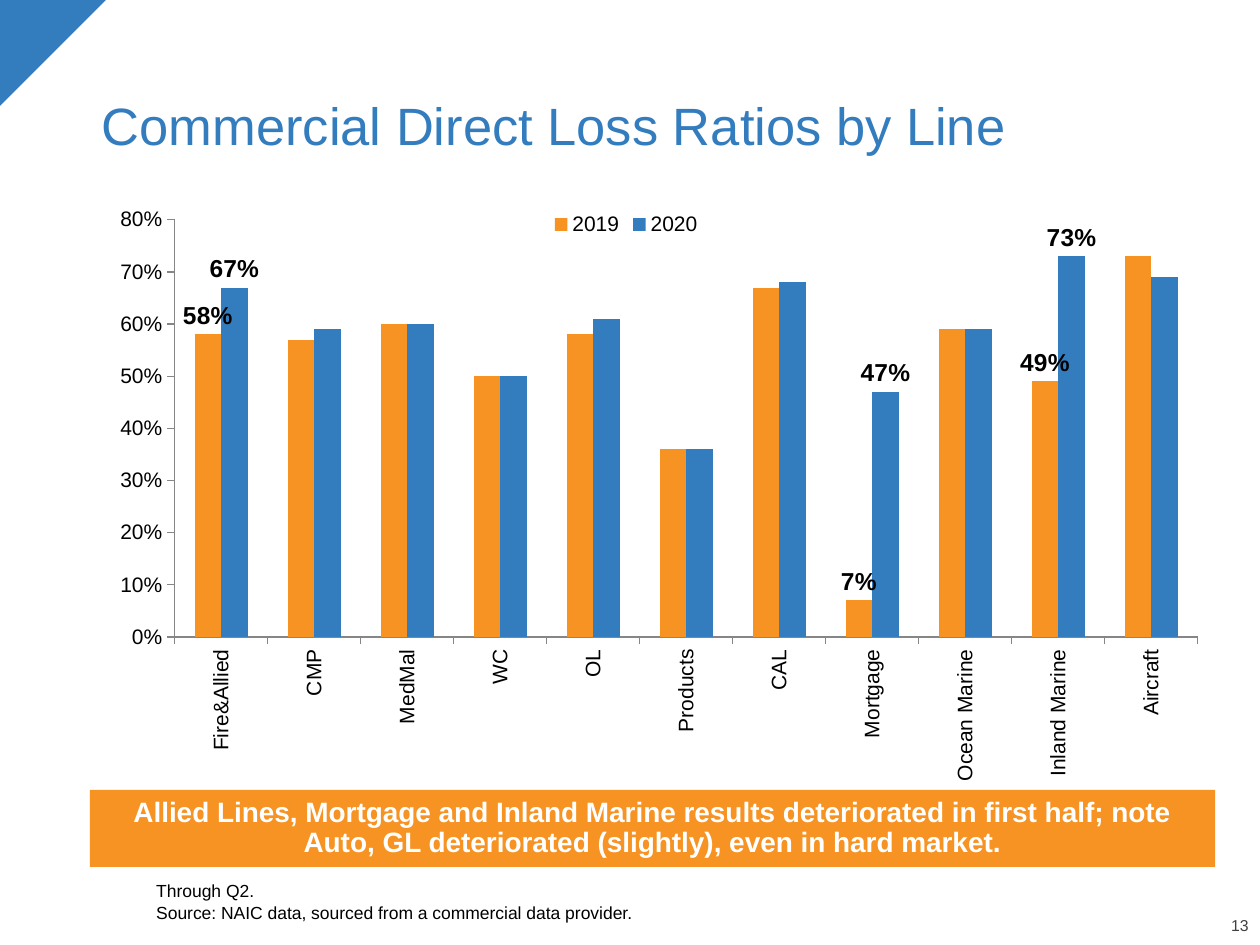
import dataclasses

import lxml.etree
import pptx
import pptx.chart.data
import pptx.dml.color
import pptx.enum.chart
import pptx.enum.shapes
import pptx.enum.text
import pptx.oxml
import pptx.oxml.ns
import pptx.util

Pt = pptx.util.Pt
Align = pptx.enum.text.PP_ALIGN
Anchor = pptx.enum.text.MSO_ANCHOR


@dataclasses.dataclass(frozen=True)
class Theme:
    font: str = "Arial"
    blue: str = "337DBE"
    orange: str = "F69322"
    white: str = "FFFFFF"
    black: str = "000000"
    dark_gray: str = "404040"
    axis_gray: str = "868686"
    title_size: float = 30
    callout_size: float = 16
    label_size: float = 14
    axis_size: float = 12
    source_size: float = 10
    number_size: float = 9


def color(value):
    return pptx.dml.color.RGBColor.from_string(value)


def style_font(font, name, size, fill, bold=False):
    font.name = name
    font.size = Pt(size)
    font.bold = bold
    font.color.rgb = color(fill)


def write_text(shape, text, *, font, size, fill, bold=False, align=Align.LEFT,
               anchor=Anchor.BOTTOM, inset=None, space_before=0):
    frame = shape.text_frame
    frame.word_wrap = True
    frame.vertical_anchor = anchor
    if inset is not None:
        frame.margin_left = frame.margin_right = Pt(inset)
        frame.margin_top = frame.margin_bottom = Pt(inset)
    for index, line in enumerate(text.split("\n")):
        paragraph = frame.add_paragraph() if index else frame.paragraphs[0]
        paragraph.alignment = align
        paragraph.line_spacing = 0.9
        paragraph.space_before = Pt(space_before if index else 0)
        run = paragraph.add_run()
        run.text = line
        style_font(run.font, font, size, fill, bold)


class SlideBuilder:
    def __init__(self, slide, theme):
        self.slide = slide
        self.theme = theme

    def text(self, box, text, **text_format):
        shape = self.slide.shapes.add_textbox(*map(Pt, box))
        write_text(shape, text, font=self.theme.font, **text_format)

    def shape(self, kind, box, fill, rotation=0):
        shape = self.slide.shapes.add_shape(kind, *map(Pt, box))
        shape.shadow.inherit = False
        shape.fill.solid()
        shape.fill.fore_color.rgb = color(fill)
        shape.line.fill.background()
        shape.rotation = rotation
        return shape

    def callout(self, box, text, fill):
        shape = self.shape(pptx.enum.shapes.MSO_SHAPE.RECTANGLE, box, fill)
        write_text(shape, text, font=self.theme.font, size=self.theme.callout_size,
                   fill=self.theme.white, bold=True, align=Align.CENTER,
                   anchor=Anchor.MIDDLE)

    def column_chart(self, box, categories, series, labelled, plot_layout):
        theme = self.theme
        data = pptx.chart.data.CategoryChartData(number_format="0%")
        data.categories = categories
        for name, values, _ in series:
            data.add_series(name, values)
        chart = self.slide.shapes.add_chart(
            pptx.enum.chart.XL_CHART_TYPE.COLUMN_CLUSTERED, *map(Pt, box), data).chart
        chart.has_title = False
        style_font(chart.font, theme.font, theme.axis_size, theme.black)
        chart.has_legend = True
        chart.legend.position = pptx.enum.chart.XL_LEGEND_POSITION.TOP
        chart.legend.include_in_layout = False
        style_font(chart.legend.font, theme.font, theme.axis_size, theme.black)

        plot = chart.plots[0]
        plot.gap_width = 150
        plot.overlap = 0
        plot.vary_by_categories = False
        for column, (_, _, fill) in zip(plot.series, series):
            column.invert_if_negative = False
            column.format.fill.solid()
            column.format.fill.fore_color.rgb = color(fill)
            for category in labelled:
                label = column.points[categories.index(category)].data_label
                style_font(label.font, theme.font, theme.label_size, theme.black, True)
                label.position = pptx.enum.chart.XL_LABEL_POSITION.OUTSIDE_END

        for axis in (chart.category_axis, chart.value_axis):
            axis.has_major_gridlines = False
            axis.major_tick_mark = pptx.enum.chart.XL_TICK_MARK.OUTSIDE
            axis.minor_tick_mark = pptx.enum.chart.XL_TICK_MARK.NONE
            axis.format.line.color.rgb = color(theme.axis_gray)
            axis.format.line.width = Pt(0.75)
            style_font(axis.tick_labels.font, theme.font, theme.axis_size, theme.black)
        chart.category_axis.tick_label_position = pptx.enum.chart.XL_TICK_LABEL_POSITION.LOW
        qualified = pptx.oxml.ns.qn
        body = chart.category_axis._element.find(
            f"{qualified('c:txPr')}/{qualified('a:bodyPr')}")
        body.set("rot", "-5400000")
        body.set("vert", "horz")
        chart.value_axis.minimum_scale = 0
        chart.value_axis.maximum_scale = 0.8
        chart.value_axis.major_unit = 0.1
        chart.value_axis.tick_labels.number_format = "0%"
        chart.value_axis.tick_labels.number_format_is_linked = False
        self.place_plot(chart, plot_layout)

    def place_plot(self, chart, plot_layout):
        qualified = pptx.oxml.ns.qn
        plot_area = chart._chartSpace.chart.plotArea
        for old_layout in plot_area.findall(qualified("c:layout")):
            plot_area.remove(old_layout)
        layout = pptx.oxml.parse_xml(
            f'<c:layout xmlns:c="{pptx.oxml.ns.nsuri("c")}"><c:manualLayout/></c:layout>')
        settings = [("layoutTarget", "inner"), ("xMode", "edge"), ("yMode", "edge")]
        settings += zip("xywh", plot_layout)
        for tag, value in settings:
            lxml.etree.SubElement(layout[0], qualified(f"c:{tag}")).set("val", str(value))
        plot_area.insert(0, layout)


def main():
    presentation = pptx.Presentation()
    presentation.slide_width = Pt(720)
    presentation.slide_height = Pt(540)
    theme = Theme()
    slide = presentation.slides.add_slide(presentation.slide_layouts[6])
    builder = SlideBuilder(slide, theme)

    builder.shape(pptx.enum.shapes.MSO_SHAPE.RIGHT_TRIANGLE, (0, 0, 60.5, 60.5),
                  theme.blue, rotation=90)
    builder.text((679, 525, 34.5, 9.5), "13", size=theme.number_size,
                 fill=theme.dark_gray, align=Align.RIGHT, inset=0)
    builder.text((51, 18, 615, 75), "Commercial Direct Loss Ratios by Line",
                 size=theme.title_size, fill=theme.blue)
    builder.text((89.3, 495.4, 604.8, 32.4),
                 "Through Q2.\n"
                 "Source: NAIC data, sourced from a commercial data provider.",
                 size=theme.source_size, fill=theme.black, inset=0, space_before=2)

    categories = ["Fire&Allied", "CMP", "MedMal", "WC", "OL", "Products", "CAL",
                  "Mortgage", "Ocean Marine", "Inland Marine", "Aircraft"]
    series = [
        ("2019", (0.58, 0.57, 0.6, 0.5, 0.58, 0.36, 0.67, 0.07, 0.59, 0.49, 0.73),
         theme.orange),
        ("2020", (0.67, 0.59, 0.6, 0.5, 0.61, 0.36, 0.68, 0.47, 0.59, 0.73, 0.69),
         theme.blue),
    ]
    builder.column_chart((24.5, 113.8, 666.7, 337.7), categories, series,
                         labelled=("Fire&Allied", "Mortgage", "Inland Marine"),
                         plot_layout=(0.113, 0.035, 0.877, 0.706))
    builder.callout((51.4, 451.4, 643, 44),
                    "Allied Lines, Mortgage and Inland Marine results deteriorated in "
                    "first half; note Auto, GL deteriorated (slightly), even in hard market.",
                    theme.orange)
    presentation.save("out.pptx")


if __name__ == "__main__":
    main()
